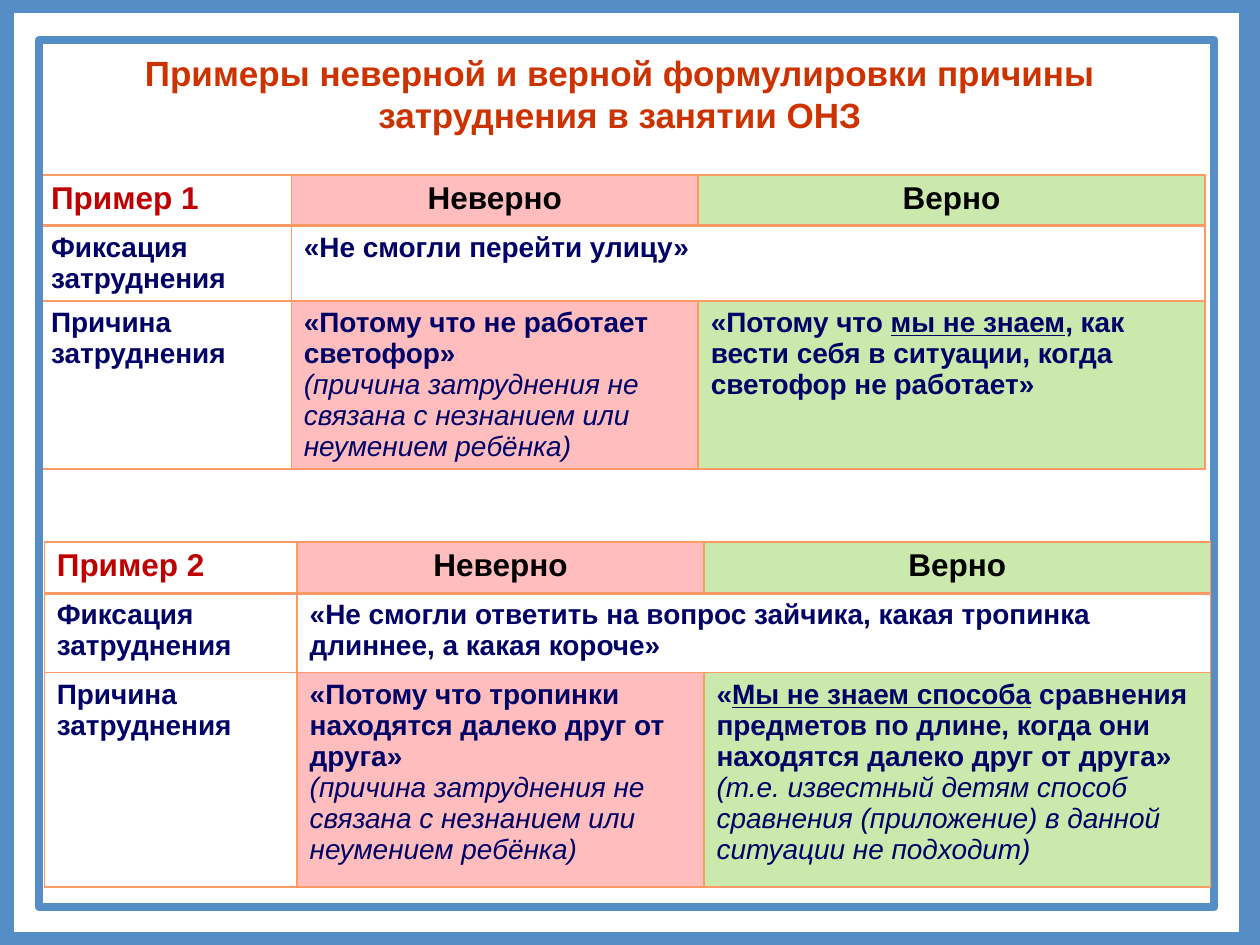
import pptx
import pptx.dml.color
import pptx.enum.shapes
import pptx.enum.text
import pptx.oxml.ns
import pptx.util
from lxml import etree

Pt = pptx.util.Pt
ALIGN = pptx.enum.text.PP_ALIGN
FONT = "Arial"
COLORS = {
    "frame": "558EC7", "title": "CC3300", "example": "C00000", "head": "000000",
    "body": "000066", "border": "FF9966", "wrong": "FFBDBD", "right": "CCE9AD",
}
COLUMNS = (144.5, 232.5, 289.5)
FILLS = (None, "wrong", "right")
REASON_NOTE = [("(причина затруднения не связана с незнанием или неумением ребёнка)", "i")]


def rgb(name):
    return pptx.dml.color.RGBColor.from_string(COLORS[name])


def add_run(p, text, size, color, style="b"):
    """Style letters: b bold, i italic, u underline."""
    r = p.add_run()
    r.text = text
    r.font.name = FONT
    r.font.size = Pt(size)
    r.font.color.rgb = rgb(color)
    r.font.bold = "b" in style
    r.font.italic = "i" in style
    r.font.underline = "u" in style


def add_frame(s, left, top, width, height, weight):
    sp = s.shapes.add_shape(pptx.enum.shapes.MSO_SHAPE.RECTANGLE,
                            Pt(left), Pt(top), Pt(width), Pt(height))
    sp.shadow.inherit = False
    sp.fill.background()
    sp.line.color.rgb = rgb("frame")
    sp.line.width = Pt(weight)


def set_title(s, text):
    sp = s.shapes.title
    sp.left, sp.top, sp.width, sp.height = Pt(31), Pt(26), Pt(646.5), Pt(55.5)
    tf = sp.text_frame
    tf.word_wrap = True
    tf.auto_size = pptx.enum.text.MSO_AUTO_SIZE.NONE
    tf.vertical_anchor = pptx.enum.text.MSO_ANCHOR.TOP
    p = tf.paragraphs[0]
    p.alignment = ALIGN.CENTER
    add_run(p, text, 20, "title")


def set_borders(cell, top, bottom):
    tcPr = cell._tc.get_or_add_tcPr()
    for i, (side, weight) in enumerate((("L", 1), ("R", 1), ("T", top), ("B", bottom))):
        ln = etree.Element(pptx.oxml.ns.qn(f"a:ln{side}"), w=str(int(Pt(weight))))
        fill = etree.SubElement(ln, pptx.oxml.ns.qn("a:solidFill"))
        etree.SubElement(fill, pptx.oxml.ns.qn("a:srgbClr"), val=COLORS["border"])
        tcPr.insert(i, ln)


def fill_cell(cell, paragraphs, size, color, align=ALIGN.LEFT):
    tf = cell.text_frame
    for i, runs in enumerate(paragraphs):
        p = tf.add_paragraph() if i else tf.paragraphs[0]
        p.alignment = align
        for text, style in runs:
            add_run(p, text, size, color, style)


def add_example(s, left, top, heights, name, difficulty, wrong, right):
    table = s.shapes.add_table(3, 3, Pt(left), Pt(top),
                               Pt(sum(COLUMNS)), Pt(sum(heights))).table
    table.first_row = table.horz_banding = False
    for column, width in zip(table.columns, COLUMNS):
        column.width = Pt(width)
    for row, height in zip(table.rows, heights):
        row.height = Pt(height)

    # Fills and borders; the line under the header is double weight
    for i in range(3):
        for j, fill in enumerate(FILLS):
            cell = table.cell(i, j)
            if fill and i != 1:
                cell.fill.solid()
                cell.fill.fore_color.rgb = rgb(fill)
            else:
                cell.fill.background()
            set_borders(cell, 2 if i == 1 else 1, 2 if i == 0 else 1)
    table.cell(1, 1).merge(table.cell(1, 2))

    # Header row
    fill_cell(table.cell(0, 0), [[(name, "b")]], 18, "example")
    for j, text in ((1, "Неверно"), (2, "Верно")):
        fill_cell(table.cell(0, j), [[(text, "b")]], 18, "head", ALIGN.CENTER)

    # Body rows
    body = {
        (1, 0): [[("Фиксация затруднения", "b")]],
        (1, 1): [[(difficulty, "b")]],
        (2, 0): [[("Причина затруднения", "b")]],
        (2, 1): [[(wrong, "b")], REASON_NOTE],
        (2, 2): right,
    }
    for (i, j), paragraphs in body.items():
        fill_cell(table.cell(i, j), paragraphs, 16, "body")


def main():
    prs = pptx.Presentation()
    prs.slide_width, prs.slide_height = Pt(720), Pt(540)
    s = prs.slides.add_slide(prs.slide_layouts[5])

    set_title(s, "Примеры неверной и верной формулировки причины затруднения в занятии ОНЗ")

    # First example lies under the frames
    add_example(
        s, 22, 100, (29, 43, 96), "Пример 1",
        "«Не смогли перейти улицу»",
        "«Потому что не работает светофор»",
        [[("«Потому что ", "b"), ("мы не знаем", "bu"),
          (", как вести себя в ситуации, когда светофор не работает»", "b")]])

    # Double frame
    add_frame(s, 0.5, 0, 715, 540, 15)
    add_frame(s, 22.3, 23, 671.7, 495.4, 4.5)

    # Second example lies over the frames
    add_example(
        s, 25.3, 309.6, (29.4, 45.4, 122.4), "Пример 2",
        "«Не смогли ответить на вопрос зайчика, какая тропинка длиннее, а какая короче»",
        "«Потому что тропинки находятся далеко друг от друга»",
        [[("«", "b"), ("Мы не знаем способа", "bu"),
          (" сравнения предметов по длине, когда они находятся далеко друг от друга»", "b")],
         [("(т.е. известный детям способ сравнения (приложение) в данной ситуации не подходит)",
           "i")]])

    prs.save("out.pptx")


if __name__ == "__main__":
    main()
